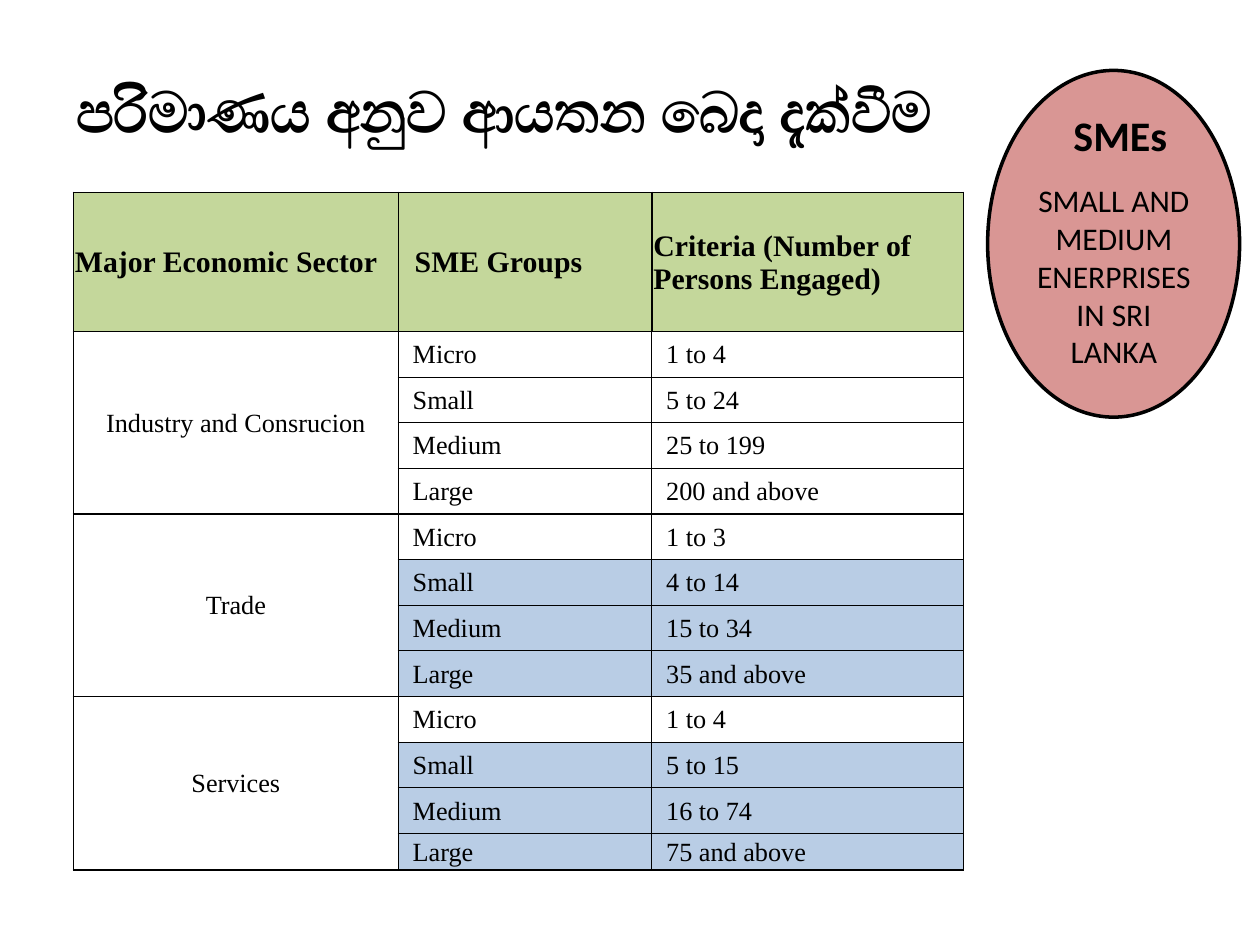
from lxml.etree import SubElement as Sub
from pptx import Presentation
from pptx.dml.color import RGBColor as Rgb
from pptx.enum.shapes import MSO_SHAPE as Kind
from pptx.enum.text import MSO_ANCHOR as Anchor, PP_ALIGN as Align
from pptx.oxml.ns import qn
from pptx.util import Cm, Pt

HUES = {"ink": "000000", "head": "C4D79B", "band": "B9CDE5", "rose": "D99694"}
SANS, SERIF = "Calibri", "Times New Roman"
HEADS = ["Major Economic Sector", "SME Groups", "Criteria (Number of Persons Engaged)"]
SIZES = ["Micro", "Small", "Medium", "Large"]
SECTORS = {
    "Industry and Consrucion": ["1 to 4", "5 to 24", "25 to 199", "200 and above"],
    "Trade": ["1 to 3", "4 to 14", "15 to 34", "35 and above"],
    "Services": ["1 to 4", "5 to 15", "16 to 74", "75 and above"],
}
WIDTHS = [6.55, 5.11, 6.28]
TALLS = [2.8] + [0.92] * 11 + [0.74]


class Deck:
    """Holds the style and the current slide."""

    def __init__(self, wide, tall):
        self.show = Presentation()
        self.show.slide_width, self.show.slide_height = Cm(wide), Cm(tall)
        self.slide = self.show.slides.add_slide(self.show.slide_layouts[6])

    def hue(self, name):
        return Rgb.from_string(HUES[name])

    def label(self, frame, text, size, face, bold=False, align=Align.LEFT):
        para = frame.paragraphs[0]
        para.alignment = align
        run = para.add_run()
        run.text = text
        font = run.font
        font.size, font.name, font.bold = Pt(size), face, bold
        font.color.rgb = self.hue("ink")

    def text(self, box, text, size, bold=False, align=Align.LEFT):
        frame = self.slide.shapes.add_textbox(*map(Cm, box)).text_frame
        frame.word_wrap = True
        self.label(frame, text, size, SANS, bold, align)

    def oval(self, box, fill, line):
        shape = self.slide.shapes.add_shape(Kind.OVAL, *map(Cm, box))
        shape.shadow.inherit = False
        shape.fill.solid()
        shape.fill.fore_color.rgb = self.hue(fill)
        shape.line.color.rgb = self.hue("ink")
        shape.line.width = Pt(line)

    def grid(self, left, top, widths, talls):
        box = map(Cm, (left, top, sum(widths), sum(talls)))
        table = self.slide.shapes.add_table(len(talls), len(widths), *box).table
        table.first_row = table.horz_banding = False
        for col, wide in zip(table.columns, widths):
            col.width = Cm(wide)
        for row, tall in zip(table.rows, talls):
            row.height = Cm(tall)
        return table

    def cell(self, cell, lines, fill=None, inset=0.03):
        """Style a cell; lines gives its left, right, top and bottom widths."""
        cell.vertical_anchor = Anchor.MIDDLE
        cell.margin_left = Cm(inset)
        cell.margin_right = cell.margin_top = Cm(0.03)
        cell.margin_bottom = 0
        props = cell._tc.get_or_add_tcPr()
        for side, wide in zip("LRTB", lines):
            line = Sub(props, qn(f"a:ln{side}"), w=str(Pt(wide)))
            paint = Sub(line, qn("a:solidFill"))
            Sub(paint, qn("a:srgbClr"), val=HUES["ink"])
        if fill:
            cell.fill.solid()
            cell.fill.fore_color.rgb = self.hue(fill)
        else:
            cell.fill.background()


def fill_table(deck):
    table = deck.grid(1.48, 3.88, WIDTHS, TALLS)
    for col, head in enumerate(HEADS):
        cell = table.cell(0, col)
        deck.cell(cell, (1, 1, 1, 1), "head", 0.33 if col == 1 else 0.03)
        deck.label(cell.text_frame, head, 17, SERIF, True)
    count = len(SIZES)
    for group, (sector, ranges) in enumerate(SECTORS.items()):
        first = 1 + group * count
        for step, pair in enumerate(zip(SIZES, ranges)):
            row = first + step
            deck.cell(table.cell(row, 0), (1, 1, 1, 1))
            above = 1 if step == 0 else 0.5
            below = 1 if step == count - 1 else 0.5
            fill = "band" if group and step else None
            for col, text in enumerate(pair, 1):
                sides = (1, 0.5) if col == 1 else (0.5, 1)
                cell = table.cell(row, col)
                deck.cell(cell, (*sides, above, below), fill, 0.29)
                deck.label(cell.text_frame, text, 15, SERIF)
        lead = table.cell(first, 0)
        lead.merge(table.cell(first + count - 1, 0))
        deck.label(lead.text_frame, sector, 15, SERIF, align=Align.CENTER)


def main():
    deck = Deck(25.4, 19.05)
    fill_table(deck)
    deck.text((1.3, 1.42, 17.88, 1.62), "පරිමාණය අනුව ආයතන බෙදා දැක්වීම", 32, True)
    deck.oval((19.91, 1.42, 5.08, 6.99), "rose", 2)
    deck.text((21.39, 2.08, 2.54, 1.27), "SMEs", 24, True)
    deck.text((20.55, 3.53, 3.81, 4.11),
              "SMALL AND MEDIUM ENERPRISES IN SRI LANKA", 18, align=Align.CENTER)
    deck.show.save("out.pptx")


if __name__ == "__main__":
    main()
